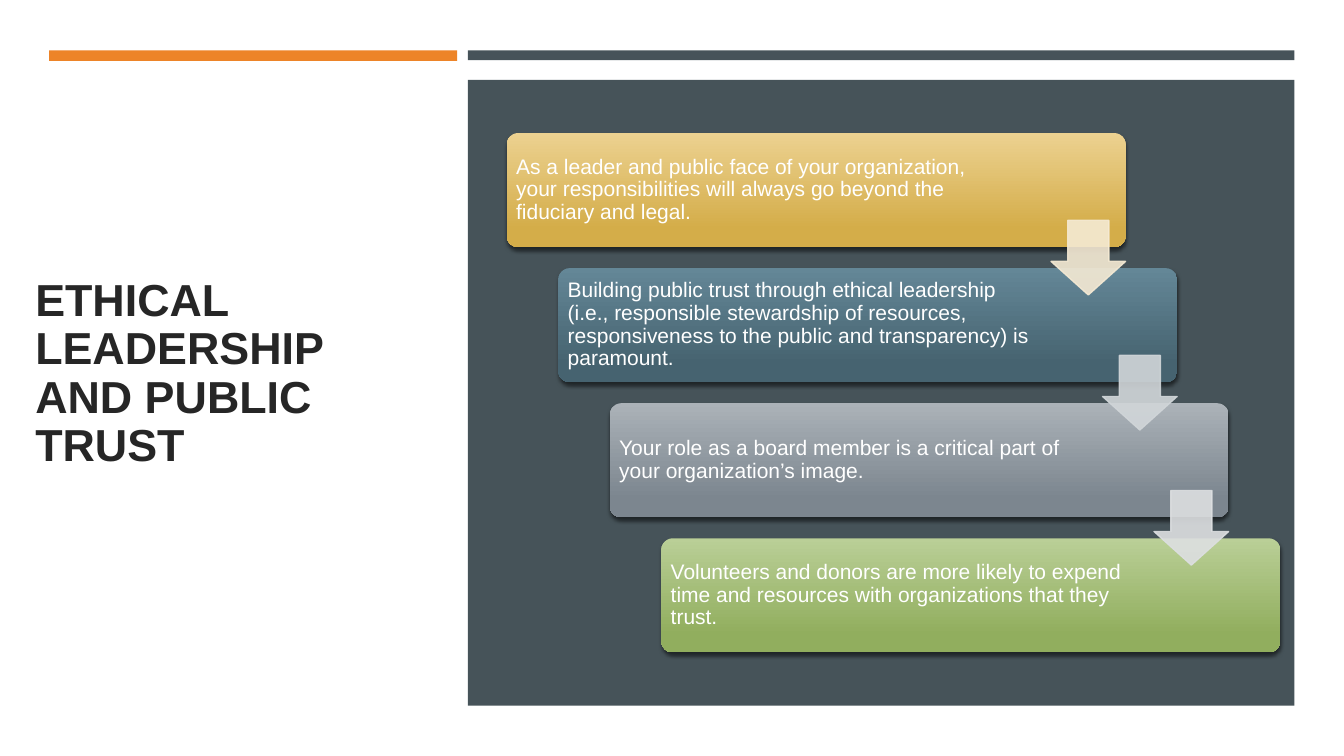
from lxml.etree import SubElement
from pptx import Presentation
from pptx.dml.color import RGBColor
from pptx.enum.shapes import MSO_SHAPE
from pptx.enum.text import MSO_ANCHOR, PP_ALIGN
from pptx.oxml.ns import qn
from pptx.util import Pt

WHITE = RGBColor(0xFF, 0xFF, 0xFF)
INK = RGBColor(0x26, 0x26, 0x26)
ORANGE = RGBColor(0xED, 0x84, 0x28)
SLATE = RGBColor(0x46, 0x53, 0x59)
GOLD_LIGHT, GOLD = RGBColor(0xEC, 0xD1, 0x90), RGBColor(0xD4, 0xAD, 0x49)
TEAL_LIGHT, TEAL = RGBColor(0x64, 0x87, 0x97), RGBColor(0x46, 0x63, 0x70)
GRAY_LIGHT, GRAY = RGBColor(0xAB, 0xB2, 0xB8), RGBColor(0x7C, 0x86, 0x8F)
GREEN_LIGHT, GREEN = RGBColor(0xBA, 0xCF, 0x97), RGBColor(0x91, 0xAE, 0x5E)
ARROW_COLORS = [
    RGBColor(0xF5, 0xEA, 0xD4),
    RGBColor(0xD1, 0xD6, 0xD9),
    RGBColor(0xDD, 0xDF, 0xE1),
]

STEPS = [
    ("As a leader and public face of your organization, your responsibilities "
     "will always go beyond the fiduciary and legal.", GOLD_LIGHT, GOLD),
    ("Building public trust through ethical leadership (i.e., responsible "
     "stewardship of resources, responsiveness to the public and transparency) "
     "is paramount.", TEAL_LIGHT, TEAL),
    ("Your role as a board member is a critical part of your organization’s "
     "image.", GRAY_LIGHT, GRAY),
    ("Volunteers and donors are more likely to expend time and resources with "
     "organizations that they trust.", GREEN_LIGHT, GREEN),
]
CARD_LEFT, CARD_TOP, CARD_WIDTH, CARD_HEIGHT = 362, 95, 442, 81.5
ARROW_LEFT, ARROW_TOP, ARROW_SIZE = 750.75, 157.4, 53.3
STEP_RIGHT, STEP_DOWN = 36.8, 96.5


class SlideBuilder:
    font = "Arial"

    def __init__(self, page):
        self.page = page
        fill = page.background.fill
        fill.solid()
        fill.fore_color.rgb = WHITE

    def add_text(self, frame, text, size, color, bold=False):
        frame.word_wrap = True
        frame.vertical_anchor = MSO_ANCHOR.MIDDLE
        para = frame.paragraphs[0]
        para.alignment = PP_ALIGN.LEFT
        para.line_spacing = 0.9
        span = para.add_run()
        span.text = text
        span.font.name = self.font
        span.font.size = Pt(size)
        span.font.bold = bold
        span.font.color.rgb = color

    def title(self, text, left, top, width, height):
        box = self.page.shapes.title
        box.left, box.top, box.width, box.height = map(Pt, (left, top, width, height))
        self.add_text(box.text_frame, text, 32, INK, bold=True)

    def shape(self, kind, left, top, width, height):
        shape = self.page.shapes.add_shape(kind, *map(Pt, (left, top, width, height)))
        shape.shadow.inherit = False
        shape.line.fill.background()
        return shape

    def block(self, color, left, top, width, height):
        block = self.shape(MSO_SHAPE.RECTANGLE, left, top, width, height)
        block.fill.solid()
        block.fill.fore_color.rgb = color

    def card(self, text, top_color, bottom_color, left, top):
        card = self.shape(MSO_SHAPE.ROUNDED_RECTANGLE, left, top, CARD_WIDTH, CARD_HEIGHT)
        card.adjustments[0] = 0.1
        card.fill.gradient()
        card.fill.gradient_angle = 270
        stops = zip(card.fill.gradient_stops, (top_color, bottom_color), (0, 0.84))
        for stop, color, position in stops:
            stop.color.rgb = color
            stop.position = position
        self.drop_shadow(card)
        frame = card.text_frame
        frame.margin_left = frame.margin_top = frame.margin_bottom = Pt(4.3)
        frame.margin_right = Pt(94.5)
        self.add_text(frame, text, 15, WHITE)

    def drop_shadow(self, shape):
        effects = shape.element.spPr.find(qn("a:effectLst"))
        shadow = SubElement(effects, qn("a:outerShdw"), blurRad=str(Pt(3)),
                            dist=str(Pt(2)), dir="5400000", rotWithShape="0")
        color = SubElement(shadow, qn("a:srgbClr"), val="000000")
        SubElement(color, qn("a:alpha"), val="55000")

    def arrow(self, color, left, top):
        arrow = self.shape(MSO_SHAPE.DOWN_ARROW, left, top, ARROW_SIZE, ARROW_SIZE)
        arrow.adjustments[0] = 0.55
        arrow.adjustments[1] = 0.45
        arrow.line.width = Pt(1)
        for fill in (arrow.fill, arrow.line.fill):
            fill.solid()
            fill.fore_color.rgb = color
        for node in arrow.element.spPr.iter(qn("a:srgbClr")):
            SubElement(node, qn("a:alpha"), val="90000")


def main():
    deck = Presentation()
    deck.slide_width, deck.slide_height = Pt(960), Pt(540)
    builder = SlideBuilder(deck.slides.add_slide(deck.slide_layouts[5]))

    builder.title("ETHICAL LEADERSHIP AND PUBLIC TRUST", 18, 82, 281, 371)
    builder.block(ORANGE, 35, 36, 291.6, 7.5)
    builder.block(SLATE, 334.2, 36, 590.4, 7)
    builder.block(SLATE, 334.2, 57, 590.4, 447)

    for index, (text, top_color, bottom_color) in enumerate(STEPS):
        builder.card(text, top_color, bottom_color,
                     CARD_LEFT + index * STEP_RIGHT, CARD_TOP + index * STEP_DOWN)
    for index, color in enumerate(ARROW_COLORS):
        builder.arrow(color, ARROW_LEFT + index * STEP_RIGHT,
                      ARROW_TOP + index * STEP_DOWN)

    deck.save("out.pptx")


if __name__ == "__main__":
    main()
